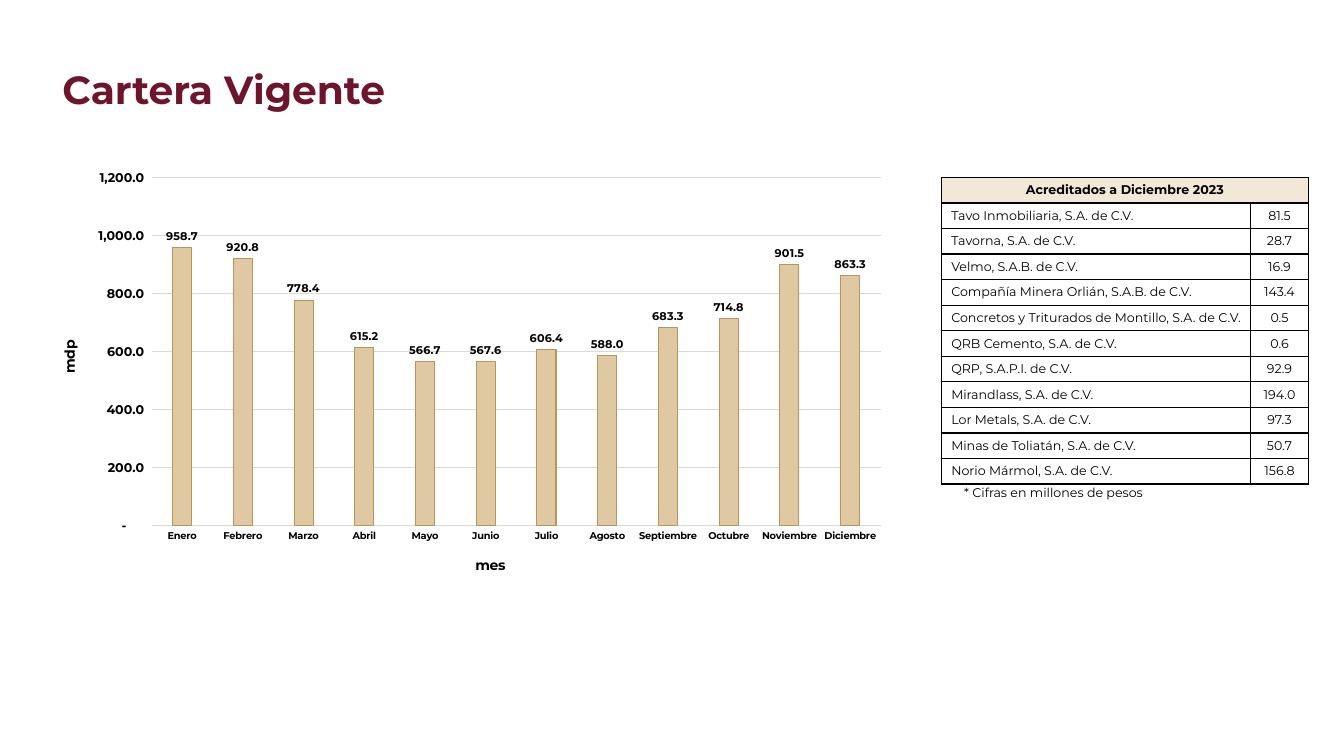
from dataclasses import dataclass
from typing import Any

from lxml.etree import SubElement
from pptx import Presentation
from pptx.chart.data import CategoryChartData
from pptx.dml.color import RGBColor
from pptx.enum.chart import XL_CHART_TYPE as ChartType
from pptx.enum.chart import XL_LABEL_POSITION as LabelPosition
from pptx.enum.chart import XL_TICK_MARK as TickMark
from pptx.enum.text import MSO_ANCHOR as Anchor
from pptx.enum.text import PP_ALIGN as Align
from pptx.oxml import parse_xml
from pptx.oxml.ns import nsdecls, qn
from pptx.util import Cm, Pt

FONT = "Montserrat"
BLACK, WHITE, WINE = "000000", "FFFFFF", "6E152E"
CREAM, SAND, OCHRE, GREY = "F1E8D7", "DEC9A2", "BC945A", "D9D9D9"
AMOUNT_FORMAT = '_-* #,##0.0_-;\\-* #,##0.0_-;_-* "-"??_-;'


@dataclass(frozen=True)
class Month:
    name: str
    balance: float


@dataclass(frozen=True)
class Borrower:
    name: str
    amount: str


@dataclass(frozen=True)
class Caption:
    text: str
    box: tuple[float, float, float, float]
    size: float
    color: str
    bold: bool
    anchor: Any


MONTHS = [
    Month("Enero", 958.7), Month("Febrero", 920.8), Month("Marzo", 778.4),
    Month("Abril", 615.2), Month("Mayo", 566.7), Month("Junio", 567.6),
    Month("Julio", 606.4), Month("Agosto", 588.0), Month("Septiembre", 683.3),
    Month("Octubre", 714.8), Month("Noviembre", 901.5), Month("Diciembre", 863.3),
]

BORROWERS = [
    Borrower("Tavo Inmobiliaria, S.A. de C.V.", "81.5"),
    Borrower("Tavorna, S.A. de C.V.", "28.7"),
    Borrower("Velmo, S.A.B. de C.V.", "16.9"),
    Borrower("Compañía Minera Orlián, S.A.B. de C.V.", "143.4"),
    Borrower("Concretos y Triturados de Montillo, S.A. de C.V.", "0.5"),
    Borrower("QRB Cemento, S.A. de C.V.", "0.6"),
    Borrower("QRP, S.A.P.I. de C.V.", "92.9"),
    Borrower("Mirandlass, S.A. de C.V.", "194.0"),
    Borrower("Lor Metals, S.A. de C.V.", "97.3"),
    Borrower("Minas de Toliatán, S.A. de C.V.", "50.7"),
    Borrower("Norio Mármol, S.A. de C.V.", "156.8"),
]

CAPTIONS = [
    Caption("Cartera Vigente", (1.32, 1.17, 27.23, 1.78), 28, WINE, True, Anchor.BOTTOM),
    Caption("* Cifras en millones de pesos", (24.05, 12.09, 6.12, 0.63), 9, BLACK, False, Anchor.TOP),
]


def rgb(color: str) -> RGBColor:
    return RGBColor.from_string(color)


def apply(target: Any, values: dict[str, Any]) -> None:
    for key, value in values.items():
        setattr(target, key, value)


def set_font(font: Any, size: float, color: str = BLACK, bold: bool = True) -> None:
    apply(font, {"name": FONT, "size": Pt(size), "bold": bold})
    font.color.rgb = rgb(color)


def set_line(line: Any, color: str) -> None:
    line.color.rgb = rgb(color)
    line.width = Pt(0.75)


def set_layout(parent: Any, index: int, **values: float) -> None:
    for old in parent.findall(qn("c:layout")):
        parent.remove(old)
    layout = parse_xml(f"<c:layout {nsdecls('c')}/>")
    manual = SubElement(layout, qn("c:manualLayout"))
    if "w" in values:
        SubElement(manual, qn("c:layoutTarget")).set("val", "inner")
    for mode in ("xMode", "yMode"):
        SubElement(manual, qn(f"c:{mode}")).set("val", "edge")
    for key, value in values.items():
        SubElement(manual, qn(f"c:{key}")).set("val", str(value))
    parent.insert(index, layout)


def add_caption(slide: Any, caption: Caption) -> None:
    frame = slide.shapes.add_textbox(*map(Cm, caption.box)).text_frame
    apply(frame, {"word_wrap": True, "vertical_anchor": caption.anchor})
    paragraph = frame.paragraphs[0]
    run = paragraph.add_run()
    run.text = caption.text
    set_font(run.font, caption.size, caption.color, caption.bold)


def style_axis(axis: Any, size: float, title: str, x: float, y: float) -> None:
    apply(axis, {"major_tick_mark": TickMark.NONE, "minor_tick_mark": TickMark.NONE})
    set_font(axis.tick_labels.font, size)
    heading = axis.axis_title
    run = heading.text_frame.paragraphs[0].add_run()
    run.text = title
    set_font(run.font, 10)
    set_layout(heading._element, 1, x=x, y=y)


def add_balance_chart(slide: Any) -> None:
    data = CategoryChartData(number_format=AMOUNT_FORMAT)
    data.categories = [month.name for month in MONTHS]
    data.add_series("Cartera Vigente", [month.balance for month in MONTHS])
    box = map(Cm, (0.89, 4.06, 21.74, 10.85))
    chart = slide.shapes.add_chart(ChartType.COLUMN_CLUSTERED, *box, data).chart
    apply(chart, {"has_legend": False, "has_title": False})
    set_font(chart.font, 10, bold=False)
    set_layout(chart._chartSpace.chart.plotArea, 0, x=0.135, y=0.039, w=0.845, h=0.808)

    months, balances = chart.category_axis, chart.value_axis
    style_axis(months, 7, "mes", 0.507, 0.91)
    style_axis(balances, 9, "mdp", 0.025, 0.41)
    set_line(months.format.line, GREY)
    apply(balances, {"minimum_scale": 0, "maximum_scale": 1200, "major_unit": 200})
    set_line(balances.major_gridlines.format.line, GREY)
    balances.format.line.fill.background()
    balances.axis_title.text_frame._txBody.bodyPr.set("rot", "-5400000")

    plot = chart.plots[0]
    apply(plot, {"gap_width": 219, "overlap": -27, "vary_by_categories": False,
                 "has_data_labels": True})
    labels = plot.data_labels
    apply(labels, {"show_value": True, "position": LabelPosition.OUTSIDE_END})
    set_font(labels.font, 8)
    for numbers in (balances.tick_labels, labels):
        apply(numbers, {"number_format": AMOUNT_FORMAT, "number_format_is_linked": False})
    columns = plot.series[0].format
    columns.fill.solid()
    columns.fill.fore_color.rgb = rgb(SAND)
    set_line(columns.line, OCHRE)


def style_cell(cell: Any, text: str, fill: str, bold: bool, align: Any) -> None:
    properties = cell._tc.get_or_add_tcPr()
    for side in ("lnL", "lnR", "lnT", "lnB"):
        border = SubElement(properties, qn(f"a:{side}"), w=str(Pt(1)))
        solid = SubElement(border, qn("a:solidFill"))
        SubElement(solid, qn("a:srgbClr"), val=BLACK)
    cell.fill.solid()
    cell.fill.fore_color.rgb = rgb(fill)
    cell.vertical_anchor = Anchor.MIDDLE
    paragraph = cell.text_frame.paragraphs[0]
    paragraph.alignment = align
    if text:
        run = paragraph.add_run()
        run.text = text
        set_font(run.font, 9, BLACK, bold)


def add_borrower_table(slide: Any) -> None:
    row_count, row_height = len(BORROWERS) + 1, 0.644
    box = map(Cm, (23.72, 4.47, 9.25, row_count * row_height))
    table = slide.shapes.add_table(row_count, 2, *box).table
    apply(table, {"first_row": False, "horz_banding": False})
    for column, width in zip(table.columns, (7.8, 1.45)):
        column.width = Cm(width)
    for row in table.rows:
        row.height = Cm(row_height)
    table.cell(0, 0).merge(table.cell(0, 1))
    for column, text in enumerate(("Acreditados a Diciembre 2023", "")):
        style_cell(table.cell(0, column), text, CREAM, True, Align.CENTER)
    for row, borrower in enumerate(BORROWERS, start=1):
        style_cell(table.cell(row, 0), borrower.name, WHITE, False, Align.LEFT)
        style_cell(table.cell(row, 1), borrower.amount, WHITE, False, Align.CENTER)


def main() -> None:
    deck = Presentation()
    apply(deck, {"slide_width": Cm(33.87), "slide_height": Cm(19.05)})
    slide = deck.slides.add_slide(deck.slide_layouts[6])
    add_balance_chart(slide)
    add_borrower_table(slide)
    for caption in CAPTIONS:
        add_caption(slide, caption)
    deck.save("out.pptx")


if __name__ == "__main__":
    main()
